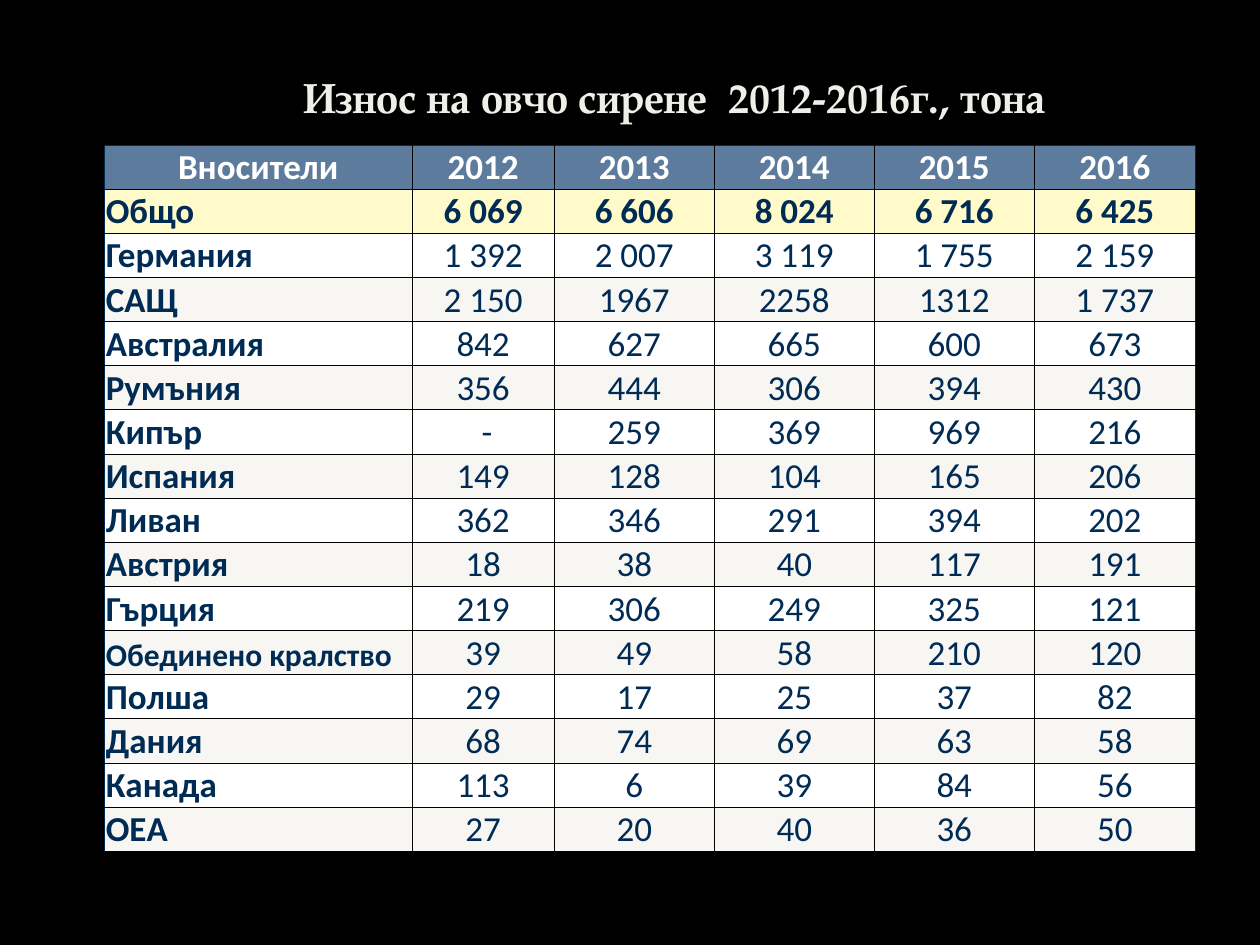
"""Build a slide with a table of sheep cheese exports by importing country, 2012-2016."""
from lxml import etree
from pptx import Presentation
from pptx.dml.color import RGBColor
from pptx.enum.text import MSO_ANCHOR, PP_ALIGN
from pptx.oxml.ns import qn
from pptx.util import Inches, Pt

LEFT, CENTER = PP_ALIGN.LEFT, PP_ALIGN.CENTER
MIDDLE, BOTTOM = MSO_ANCHOR.MIDDLE, MSO_ANCHOR.BOTTOM

COLORS = {
    "background": "000000",
    "title": "EDF0E9",
    "header": "5D7B9D",
    "header_text": "FFFFFF",
    "total": "FEFAC9",
    "plain": "FFFFFF",
    "band": "F7F6F3",
    "navy": "002B54",
    "grid": "000000",
}
COLUMN_WIDTHS = [2.44, 1.13, 1.27, 1.27, 1.27, 1.28]
ROW_HEIGHT = 0.34
MARGINS = {"margin_left": 0.01, "margin_right": 0.01, "margin_top": 0.01, "margin_bottom": 0}
EXPORTS = [
    ["Вносители", "2012", "2013", "2014", "2015", "2016"],
    ["Общо", "6 069", "6 606", "8 024", "6 716", "6 425"],
    ["Германия", "1 392", "2 007", "3 119", "1 755", "2 159"],
    ["САЩ", "2 150", "1967", "2258", "1312", "1 737"],
    ["Австралия", "842", "627", "665", "600", "673"],
    ["Румъния", "356", "444", "306", "394", "430"],
    ["Кипър", " -", "259", "369", "969", "216"],
    ["Испания", "149", "128", "104", "165", "206"],
    ["Ливан", "362", "346", "291", "394", "202"],
    ["Австрия", "18", "38", "40", "117", "191"],
    ["Гърция", "219", "306", "249", "325", "121"],
    ["Обединено кралство", "39", "49", "58", "210", "120"],
    ["Полша", "29", "17", "25", "37", "82"],
    ["Дания", "68", "74", "69", "63", "58"],
    ["Канада", "113", "6", "39", "84", "56"],
    ["ОЕА", "27", "20", "40", "36", "50"],
]


def write_text(paragraph, text, alignment, color, **font_format):
    paragraph.alignment = alignment
    run = paragraph.add_run()
    run.text = text
    run.font.color.rgb = RGBColor.from_string(COLORS[color])
    for name, value in font_format.items():
        setattr(run.font, name, value)


def add_border(cell, side, color):
    line = etree.SubElement(cell._tc.get_or_add_tcPr(), qn(f"a:ln{side}"), w=str(Pt(0.5)))
    fill = etree.SubElement(line, qn("a:solidFill"))
    etree.SubElement(fill, qn("a:srgbClr"), val=COLORS[color])


presentation = Presentation()
presentation.slide_width = Inches(10)
presentation.slide_height = Inches(7.5)
slide = presentation.slides.add_slide(presentation.slide_layouts[6])
slide.background.fill.solid()
slide.background.fill.fore_color.rgb = RGBColor.from_string(COLORS["background"])

table = slide.shapes.add_table(
    len(EXPORTS), len(COLUMN_WIDTHS), Inches(0.83), Inches(1.15),
    Inches(sum(COLUMN_WIDTHS)), Inches(ROW_HEIGHT * len(EXPORTS)),
).table
for column, width in zip(table.columns, COLUMN_WIDTHS):
    column.width = Inches(width)

last_column = len(COLUMN_WIDTHS) - 1
for row_index, values in enumerate(EXPORTS):
    table.rows[row_index].height = Inches(ROW_HEIGHT)
    is_header = row_index == 0
    band = "band" if row_index % 2 else "plain"
    fill_color = {0: "header", 1: "total"}.get(row_index, band)
    for column_index, value in enumerate(values):
        cell = table.cell(row_index, column_index)
        is_name = column_index == 0
        for name, margin in MARGINS.items():
            setattr(cell, name, Inches(margin))
        cell.vertical_anchor = MIDDLE if is_header and is_name else BOTTOM
        add_border(cell, "L", "navy" if is_name else "grid")
        add_border(cell, "R", "navy" if column_index == last_column else "grid")
        add_border(cell, "T", "navy" if is_header else "grid")
        add_border(cell, "B", "grid")
        cell.fill.solid()
        cell.fill.fore_color.rgb = RGBColor.from_string(COLORS[fill_color])
        write_text(
            cell.text_frame.paragraphs[0], value,
            LEFT if is_name and not is_header else CENTER,
            "header_text" if is_header else "navy",
            name="Calibri",
            size=Pt(18 if value == "Обединено кралство" else 20),
            bold=is_name or row_index < 2,
        )

title = slide.shapes.add_textbox(Inches(1.85), Inches(0.52), Inches(7.01), Inches(0.5))
title.text_frame.word_wrap = True
write_text(
    title.text_frame.paragraphs[0], "Износ на овчо сирене  2012-2016г., тона",
    CENTER, "title", name="TeX Gyre Pagella", size=Pt(24), bold=True,
)

presentation.save("out.pptx")
